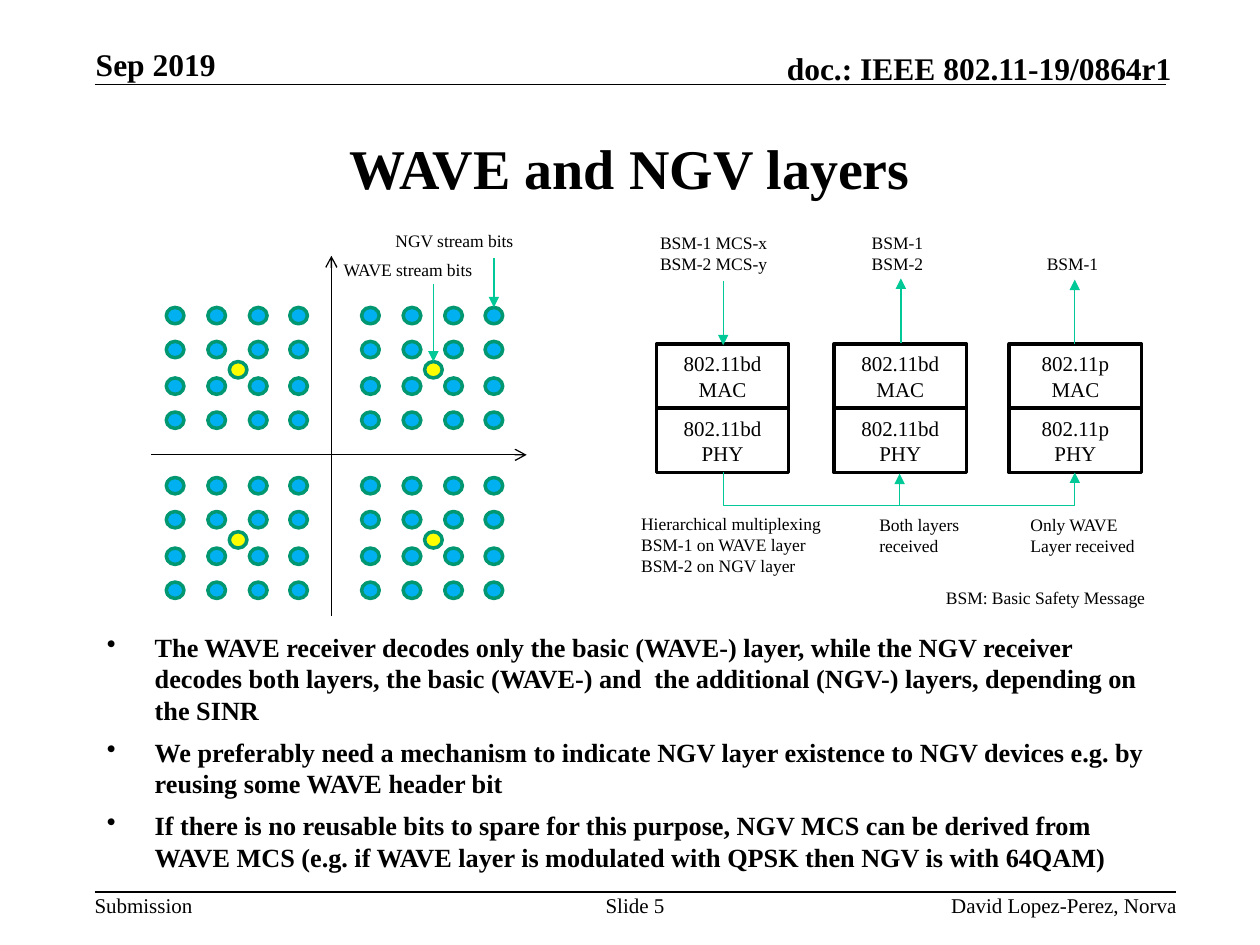
from pptx import Presentation
from pptx import util as u
from pptx.dml.color import RGBColor
from pptx.enum import shapes, text
from pptx.oxml.ns import qn
from lxml import etree

COLORS = {"black": "000000", "ngv": "00B0F0", "wave": "FFFF00", "ring": "009771", "arrow": "00C896"}
COLORS = {name: RGBColor.from_string(value) for name, value in COLORS.items()}
LEFT, CENTER, RIGHT = text.PP_ALIGN.LEFT, text.PP_ALIGN.CENTER, text.PP_ALIGN.RIGHT
TOP, MIDDLE, BOTTOM = text.MSO_ANCHOR.TOP, text.MSO_ANCHOR.MIDDLE, text.MSO_ANCHOR.BOTTOM


def write(shape, lines, size, bold=False, align=LEFT, anchor=TOP, wrap=True, margins=(0.1, 0.05)):
    frame = shape.text_frame
    side, edge = (u.Inches(margin) for margin in margins)
    frame_format = {"word_wrap": wrap, "vertical_anchor": anchor, "margin_left": side,
                    "margin_right": side, "margin_top": edge, "margin_bottom": edge}
    for name, value in frame_format.items():
        setattr(frame, name, value)
    for index, line in enumerate(lines):
        paragraph = frame.add_paragraph() if index else frame.paragraphs[0]
        run = paragraph.add_run()
        run.text = line
        paragraph.alignment = align
        run.font.color.rgb = COLORS["black"]
        for name, value in {"name": "Times New Roman", "size": u.Pt(size), "bold": bold}.items():
            setattr(run.font, name, value)
    return frame


def draw_path(container, points, color, width=0.75, end=None):
    """Draw a straight connector, or an open outline for more than two points."""
    points = [(u.Inches(x), u.Inches(y)) for x, y in points]
    if len(points) == 2:
        path = container.add_connector(shapes.MSO_CONNECTOR.STRAIGHT, *points[0], *points[1])
        etree.SubElement(path._element.spPr, qn("a:effectLst"))
    else:
        builder = container.build_freeform(*points[0], scale=1.0)
        builder.add_line_segments(points[1:], close=False)
        path = builder.convert_to_shape()
        path.shadow.inherit = False
        path.fill.background()
    path.line.color.rgb = COLORS[color]
    path.line.width = u.Pt(width)
    if end:
        etree.SubElement(path.line._get_or_add_ln(), qn("a:tailEnd"), type=end)


presentation = Presentation()
presentation.slide_width, presentation.slide_height = u.Inches(10), u.Inches(7.5)
slide = presentation.slides.add_slide(presentation.slide_layouts[6])

# Header, footer and title
draw_path(slide.shapes, [(0.75, 0.67), (9.25, 0.67)], "black", 1)
draw_path(slide.shapes, [(0.75, 7.08), (9.33, 7.08)], "black", 1)
page_texts = [
    ("Sep 2019", (0.76, 0.36, 2.05, 0.3), 18, True, LEFT, BOTTOM),
    ("doc.: IEEE 802.11-19/0864r1", (5.47, 0.39, 3.83, 0.3), 18, True, RIGHT, BOTTOM),
    ("WAVE and NGV layers", (0.75, 0.75, 8.5, 1.16), 32, True, CENTER, MIDDLE),
    ("Submission", (0.75, 7.08, 0.78, 0.2), 12, False, LEFT, TOP),
    ("Slide 5", (4.75, 7.08, 0.58, 0.4), 12, False, CENTER, TOP),
    ("David Lopez-Perez, Norva", (5.86, 7.08, 3.48, 0.2), 12, False, RIGHT, TOP),
]
for label, place, size, bold, align, anchor in page_texts:
    box = slide.shapes.add_textbox(*map(u.Inches, place))
    write(box, [label], size, bold, align, anchor, wrap=label != "Submission", margins=(0, 0))

# Bullets
bullets = [
    "The WAVE receiver decodes only the basic (WAVE-) layer, while the NGV receiver decodes both "
    "layers, the basic (WAVE-) and  the additional (NGV-) layers, depending on the SINR",
    "We preferably need a mechanism to indicate NGV layer existence to NGV devices e.g. by "
    "reusing some WAVE header bit",
    "If there is no reusable bits to spare for this purpose, NGV MCS can be derived from "
    "WAVE MCS (e.g. if WAVE layer is modulated with QPSK then NGV is with 64QAM)",
]
box = slide.shapes.add_textbox(*map(u.Inches, (0.75, 4.96, 8.5, 1.86)))
for index, paragraph in enumerate(write(box, bullets, 15, bold=True).paragraphs):
    properties = paragraph._p.get_or_add_pPr()
    properties.set("marL", str(u.Inches(0.38)))
    properties.set("indent", str(-u.Inches(0.38)))
    etree.SubElement(properties, qn("a:buChar"), char="•")
    if index:
        paragraph.space_before = u.Pt(6)

# Constellation: a 4 by 4 NGV grid around one WAVE point in each quadrant
constellation = slide.shapes.add_group_shape().shapes
draw_path(constellation, [(2.63, 4.89), (2.63, 2.03)], "black", end="arrow")
draw_path(constellation, [(1.2, 3.61), (4.18, 3.61)], "black", end="arrow")
points = [(x, y, "ngv") for x in (0, 0.33, 0.66, 0.98) for y in (0, 0.27, 0.56, 0.83)]
points.append((0.5, 0.43, "wave"))
for left in (1.32, 2.87):
    for top in (2.44, 3.79):
        for x, y, layer in points:
            place = map(u.Inches, (left + x, top + y, 0.14, 0.13))
            dot = constellation.add_shape(shapes.MSO_SHAPE.OVAL, *place)
            dot.shadow.inherit = False
            dot.fill.solid()
            dot.fill.fore_color.rgb = COLORS[layer]
            dot.line.color.rgb = COLORS["ring"]
            dot.line.width = u.Pt(2)
draw_path(constellation, [(3.44, 2.25), (3.44, 2.87)], "arrow", end="triangle")
draw_path(constellation, [(3.92, 2.05), (3.92, 2.44)], "arrow", end="triangle")

# Protocol stacks
stacks = slide.shapes.add_group_shape().shapes
for left, standard in ((5.21, "802.11bd"), (6.62, "802.11bd"), (8.01, "802.11p")):
    for top, layer in ((2.73, "MAC"), (3.24, "PHY")):
        block = stacks.add_shape(shapes.MSO_SHAPE.RECTANGLE, *map(u.Inches, (left, top, 1.05, 0.51)))
        block.shadow.inherit = False
        block.fill.background()
        block.line.color.rgb = COLORS["black"]
        block.line.width = u.Pt(2)
        write(block, [standard, layer], 12, align=CENTER, anchor=MIDDLE)
stack_arrows = [
    [(5.74, 2.23), (5.74, 2.74)],
    [(7.15, 2.72), (7.15, 2.21)],
    [(8.53, 2.73), (8.53, 2.22)],
    [(5.74, 3.75), (5.74, 4.01), (7.14, 4.01), (7.14, 3.76)],
    [(7.14, 3.76), (7.14, 4.01), (8.53, 4.01), (8.53, 3.75)],
]
for arrow in stack_arrows:
    draw_path(stacks, arrow, "arrow", end="triangle")

# Diagram labels
labels = [
    (constellation, (2.63, 2.01, 1.27, 0.27), ["WAVE stream bits"]),
    (constellation, (3.04, 1.78, 1.15, 0.27), ["NGV stream bits"]),
    (stacks, (5.14, 1.79, 1.06, 0.44), ["BSM-1 MCS-x", "BSM-2 MCS-y"]),
    (stacks, (6.82, 1.79, 0.61, 0.44), ["BSM-1", "BSM-2"]),
    (stacks, (8.21, 1.96, 0.61, 0.27), ["BSM-1"]),
    (stacks, (4.99, 4.02, 1.65, 0.61),
     ["Hierarchical multiplexing", "BSM-1 on WAVE layer", "BSM-2 on NGV layer"]),
    (stacks, (6.88, 4.03, 0.85, 0.44), ["Both layers", "received"]),
    (stacks, (8.08, 4.03, 1.05, 0.44), ["Only WAVE", "Layer received"]),
    (stacks, (7.41, 4.61, 1.8, 0.27), ["BSM: Basic Safety Message"]),
]
for group, place, lines in labels:
    write(group.add_textbox(*map(u.Inches, place)), lines, 10, wrap=False)

presentation.save("out.pptx")
